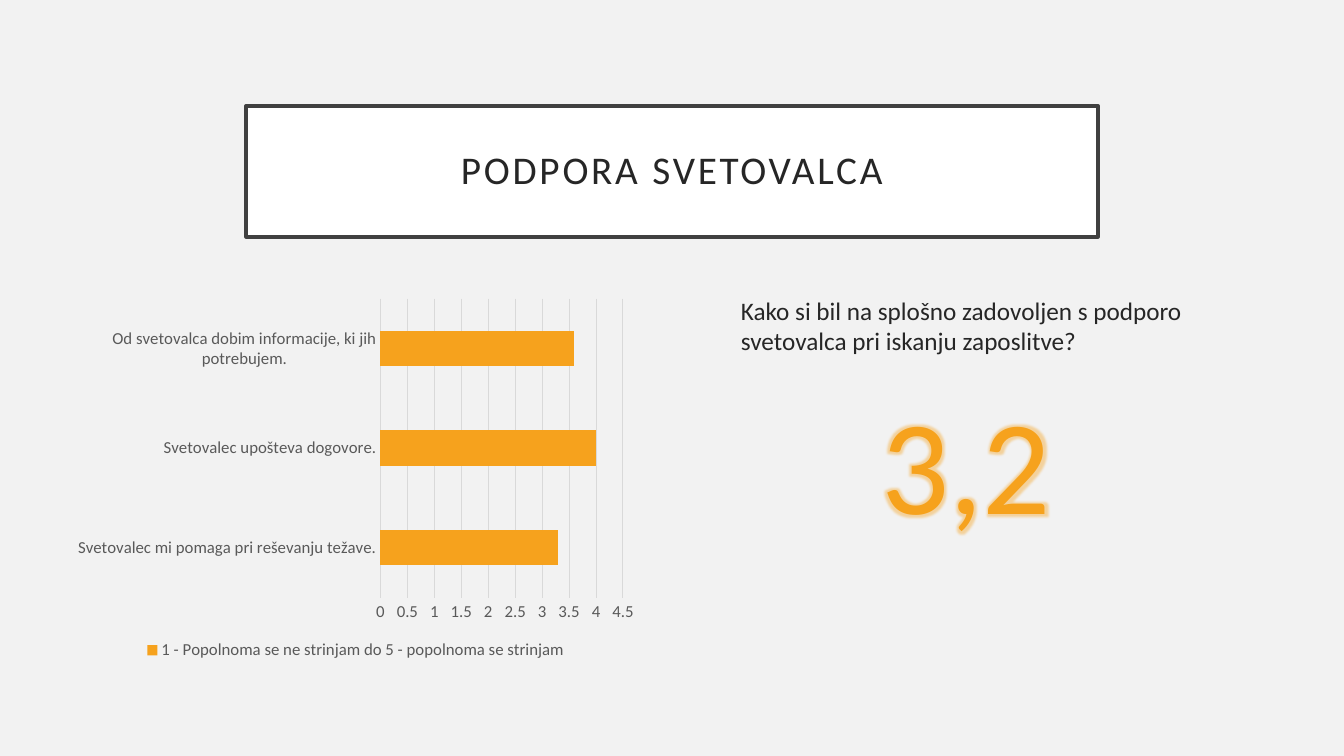
import pptx
import pptx.util
import pptx.dml.color
import pptx.chart.data
import pptx.enum.chart
import pptx.enum.shapes
import pptx.enum.text
import pptx.oxml
import pptx.oxml.ns
from pptx.util import Inches

FACE = "Calibri"
ORANGE = "F6A21D"
DARK = "262626"
GREY = "595959"
PALE = "D9D9D9"
ALIGN = pptx.enum.text.PP_ALIGN
ANCHOR = pptx.enum.text.MSO_ANCHOR
BARS = {
    "Svetovalec mi pomaga pri reševanju težave.": 3.3,
    "Svetovalec upošteva dogovore.": 4,
    "Od svetovalca dobim informacije, ki jih potrebujem.": 3.6,
}


def color(code):
    return pptx.dml.color.RGBColor.from_string(code)


def apply(item, values):
    for name, value in values.items():
        setattr(item, name, value)


def paint(fill, code):
    fill.solid()
    fill.fore_color.rgb = color(code)


def stroke(line, code, width):
    paint(line.fill, code)
    line.width = pptx.util.Pt(width)


def style(font, size, code):
    apply(font, {"name": FACE, "size": pptx.util.Pt(size), "bold": False})
    font.color.rgb = color(code)


def write(shape, text, size, code, frame, para):
    apply(shape.text_frame, {"word_wrap": True, **frame})
    line = shape.text_frame.paragraphs[0]
    apply(line, para)
    run = line.add_run()
    run.text = text
    style(run.font, size, code)
    return run


def add_title(slide):
    box = slide.shapes.add_shape(
        pptx.enum.shapes.MSO_SHAPE.RECTANGLE,
        Inches(2.44), Inches(1.05), Inches(8.45), Inches(1.3))
    box.shadow.inherit = False
    paint(box.fill, "FFFFFF")
    stroke(box.line, "404040", 2.5)
    sides = ("left", "top", "right", "bottom")
    frame = {f"margin_{side}": Inches(0.2) for side in sides}
    frame["vertical_anchor"] = ANCHOR.MIDDLE
    run = write(box, "PODPORA SVETOVALCA", 28, DARK, frame,
                {"alignment": ALIGN.CENTER, "line_spacing": 0.9})
    run.font._element.set("spc", "200")


def add_text(slide, area, text, size, code, para):
    box = slide.shapes.add_textbox(*map(Inches, area))
    return write(box, text, size, code, {"vertical_anchor": ANCHOR.TOP}, para)


def add_glow(run, code):
    glow = pptx.oxml.parse_xml(
        f'<a:effectLst {pptx.oxml.ns.nsdecls("a")}><a:glow rad="63500">'
        f'<a:srgbClr val="{code}"><a:alpha val="40000"/></a:srgbClr>'
        '</a:glow></a:effectLst>')
    fill = run.font._element.find(pptx.oxml.ns.qn("a:solidFill"))
    fill.addnext(glow)


def add_bars(slide):
    kinds = pptx.enum.chart
    data = pptx.chart.data.CategoryChartData()
    data.categories = list(BARS)
    data.add_series(
        "1 - Popolnoma se ne strinjam do 5 - popolnoma se strinjam",
        list(BARS.values()))
    chart = slide.shapes.add_chart(
        kinds.XL_CHART_TYPE.BAR_CLUSTERED,
        Inches(0.66), Inches(2.89), Inches(5.74), Inches(3.7), data).chart
    apply(chart, {"has_title": False, "has_legend": True})
    style(chart.font, 10, "000000")
    apply(chart.legend, {"position": kinds.XL_LEGEND_POSITION.BOTTOM,
                         "include_in_layout": False})
    style(chart.legend.font, 12, GREY)
    plot = chart.plots[0]
    apply(plot, {"gap_width": 182, "vary_by_categories": False})
    paint(plot.series[0].format.fill, ORANGE)
    for axis in (chart.category_axis, chart.value_axis):
        apply(axis, {"major_tick_mark": kinds.XL_TICK_MARK.NONE,
                     "minor_tick_mark": kinds.XL_TICK_MARK.NONE})
        style(axis.tick_labels.font, 12, GREY)
    stroke(chart.category_axis.format.line, PALE, 0.75)
    chart.value_axis.format.line.fill.background()
    apply(chart.value_axis, {"has_major_gridlines": True})
    stroke(chart.value_axis.major_gridlines.format.line, PALE, 0.75)
    apply(chart.value_axis.tick_labels,
          {"number_format": "General", "number_format_is_linked": False})


def main():
    deck = pptx.Presentation()
    apply(deck, {"slide_width": Inches(13.33), "slide_height": Inches(7.5)})
    slide = deck.slides.add_slide(deck.slide_layouts[6])
    paint(slide.background.fill, "F2F2F2")
    add_title(slide)
    add_bars(slide)
    add_text(slide, (7.25, 2.88, 4.67, 3.39),
             "Kako si bil na splošno zadovoljen s podporo svetovalca "
             "pri iskanju zaposlitve?",
             18, DARK, {"space_before": pptx.util.Pt(10)})
    score = add_text(slide, (8.32, 3.72, 2.53, 1.72), "3,2", 96, ORANGE,
                     {"alignment": ALIGN.CENTER})
    add_glow(score, ORANGE)
    deck.save("out.pptx")


if __name__ == "__main__":
    main()
